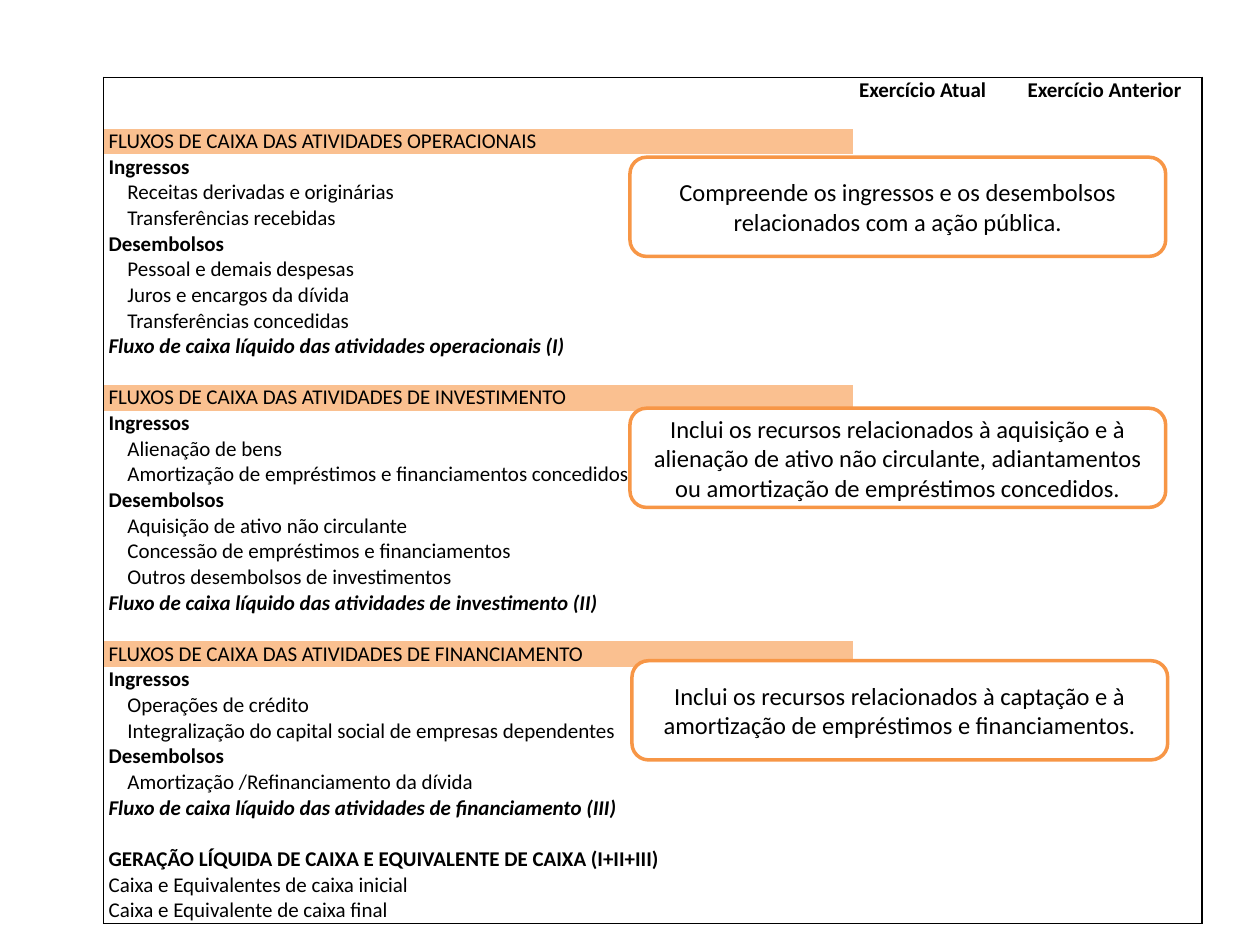
from lxml import etree
from pptx import Presentation
from pptx import util as u
from pptx.dml.color import RGBColor
from pptx.enum import shapes, text
from pptx.oxml.ns import qn

COLORS = {"ink": "000000", "band": "FAC090", "accent": "F79646", "paper": "FFFFFF"}
PLAIN_TABLE = "{2D5ABB26-0587-4C30-8999-92F81FD0307C}"
COLUMN_WIDTHS = [6.35, 7.39, 1.07, 0.2, 3.1, 3.93]
LINE_HEIGHT = 0.51
INDENT = 0.38

# Each row is a kind and its lines of text.
ROWS = [
    ("header", ["Exercício Atual", "Exercício Anterior"]),
    ("gap", [""]),
    ("section", ["FLUXOS DE CAIXA DAS ATIVIDADES OPERACIONAIS"]),
    ("group", ["Ingressos"]),
    ("items", ["Receitas derivadas e originárias", "Transferências recebidas"]),
    ("group", ["Desembolsos"]),
    ("items", ["Pessoal e demais despesas", "Juros e encargos da dívida",
               "Transferências concedidas"]),
    ("total", ["Fluxo de caixa líquido das atividades operacionais (I)"]),
    ("gap", [""]),
    ("section", ["FLUXOS DE CAIXA DAS ATIVIDADES DE INVESTIMENTO"]),
    ("group", ["Ingressos"]),
    ("items", ["Alienação de bens",
               "Amortização de empréstimos e financiamentos concedidos"]),
    ("group", ["Desembolsos"]),
    ("items", ["Aquisição de ativo não circulante",
               "Concessão de empréstimos e financiamentos",
               "Outros desembolsos de investimentos"]),
    ("total", ["Fluxo de caixa líquido das atividades de investimento (II)"]),
    ("gap", [""]),
    ("section", ["FLUXOS DE CAIXA DAS ATIVIDADES DE FINANCIAMENTO"]),
    ("group", ["Ingressos"]),
    ("items", ["Operações de crédito",
               "Integralização do capital social de empresas dependentes"]),
    ("group", ["Desembolsos"]),
    ("items", ["Amortização /Refinanciamento da dívida"]),
    ("total", ["Fluxo de caixa líquido das atividades de financiamento (III)"]),
    ("gap", [""]),
    ("group", ["GERAÇÃO LÍQUIDA DE CAIXA E EQUIVALENTE DE CAIXA (I+II+III)"]),
    ("plain", ["Caixa e Equivalentes de caixa inicial",
               "Caixa e Equivalente de caixa final"]),
]
FORMATS = {
    "group": {"bold": True},
    "items": {"indent": INDENT},
    "total": {"bold": True, "italic": True},
}
CALLOUTS = [
    (12.7, 3.17, "Compreende os ingressos e os desembolsos relacionados com a ação pública."),
    (12.7, 8.23, "Inclui os recursos relacionados à aquisição e à alienação de ativo não "
                 "circulante, adiantamentos ou amortização de empréstimos concedidos."),
    (12.74, 13.32, "Inclui os recursos relacionados à captação e à amortização de "
                   "empréstimos e financiamentos."),
]


def rgb(name):
    return RGBColor.from_string(COLORS[name])


def write(frame, lines, size=12, bold=False, italic=False, align=text.PP_ALIGN.LEFT, indent=0):
    """Fill a text frame with one paragraph per line; an empty line keeps its size."""
    for number, line in enumerate(lines):
        paragraph = frame.add_paragraph() if number else frame.paragraphs[0]
        paragraph.alignment = align
        if indent:
            paragraph._p.get_or_add_pPr().set("marL", str(u.Cm(indent)))
        if not line:
            etree.SubElement(paragraph._p, qn("a:endParaRPr"), sz=str(size * 100))
            continue
        run = paragraph.add_run()
        run.text = line
        font = run.font
        font.name, font.size, font.bold, font.italic = "Calibri", u.Pt(size), bold, italic
        font.color.rgb = rgb("ink")


def set_borders(cell, sides):
    """Draw a thin line on the given sides, named in the order L, R, T, B."""
    properties = cell._tc.get_or_add_tcPr()
    for position, side in enumerate(sides):
        line = etree.Element(qn("a:ln" + side), w=str(u.Pt(1)))
        fill = etree.SubElement(line, qn("a:solidFill"))
        etree.SubElement(fill, qn("a:srgbClr"), val=COLORS["ink"])
        properties.insert(position, line)


class SlideBuilder:
    def __init__(self, slide):
        self.slide = slide

    def statement(self, left, top):
        last_row, last_column = len(ROWS) - 1, len(COLUMN_WIDTHS) - 1
        lines = [1 if kind == "header" else len(content) for kind, content in ROWS]
        frame = self.slide.shapes.add_table(
            len(ROWS), len(COLUMN_WIDTHS), u.Cm(left), u.Cm(top),
            u.Cm(sum(COLUMN_WIDTHS)), u.Cm(LINE_HEIGHT * sum(lines)))
        table = frame.table
        table.first_row = table.horz_banding = False
        table._tbl.tblPr.find(qn("a:tableStyleId")).text = PLAIN_TABLE
        for column, width in zip(table.columns, COLUMN_WIDTHS):
            column.width = u.Cm(width)
        for row_number, (kind, content) in enumerate(ROWS):
            table.rows[row_number].height = u.Cm(LINE_HEIGHT * lines[row_number])
            if kind == "header":
                spans = [(0, 2), (3, 4)]
                entries = dict(zip((3, 5), content))
            else:
                spans = [(2, 3)] if row_number == 1 else [(0, 3)]
                entries = {}
            for first, last in spans:
                table.cell(row_number, first).merge(table.cell(row_number, last))
            for column_number in range(last_column + 1):
                cell = table.cell(row_number, column_number)
                cell.margin_left = cell.margin_right = u.Cm(0.1)
                cell.margin_top = cell.margin_bottom = 0
                cell.vertical_anchor = text.MSO_ANCHOR.BOTTOM
                if kind == "section" and column_number <= 3:
                    cell.fill.solid()
                    cell.fill.fore_color.rgb = rgb("band")
                else:
                    cell.fill.background()
                edges = {"L": column_number == 0, "R": column_number == last_column,
                         "T": row_number == 0, "B": row_number == last_row}
                set_borders(cell, [side for side, drawn in edges.items() if drawn])
                if column_number in entries:
                    write(cell.text_frame, [entries[column_number]], bold=True,
                          align=text.PP_ALIGN.CENTER)
                elif column_number == 0 and kind != "header":
                    write(cell.text_frame, content, **FORMATS.get(kind, {}))
                else:
                    write(cell.text_frame, [""])

    def callout(self, left, top, message):
        shape = self.slide.shapes.add_shape(
            shapes.MSO_SHAPE.ROUNDED_RECTANGLE, u.Cm(left), u.Cm(top), u.Cm(10.8), u.Cm(2))
        shape.shadow.inherit = False
        shape.fill.solid()
        shape.fill.fore_color.rgb = rgb("paper")
        shape.line.color.rgb = rgb("accent")
        shape.line.width = u.Pt(2)
        shape.text_frame.word_wrap = True
        shape.text_frame.vertical_anchor = text.MSO_ANCHOR.MIDDLE
        write(shape.text_frame, [message], size=14, align=text.PP_ALIGN.CENTER)


def main():
    presentation = Presentation()
    presentation.slide_width, presentation.slide_height = u.Cm(25.4), u.Cm(19.05)
    builder = SlideBuilder(presentation.slides.add_slide(presentation.slide_layouts[6]))
    builder.statement(2.09, 1.56)
    for left, top, message in CALLOUTS:
        builder.callout(left, top, message)
    presentation.save("out.pptx")


if __name__ == "__main__":
    main()
